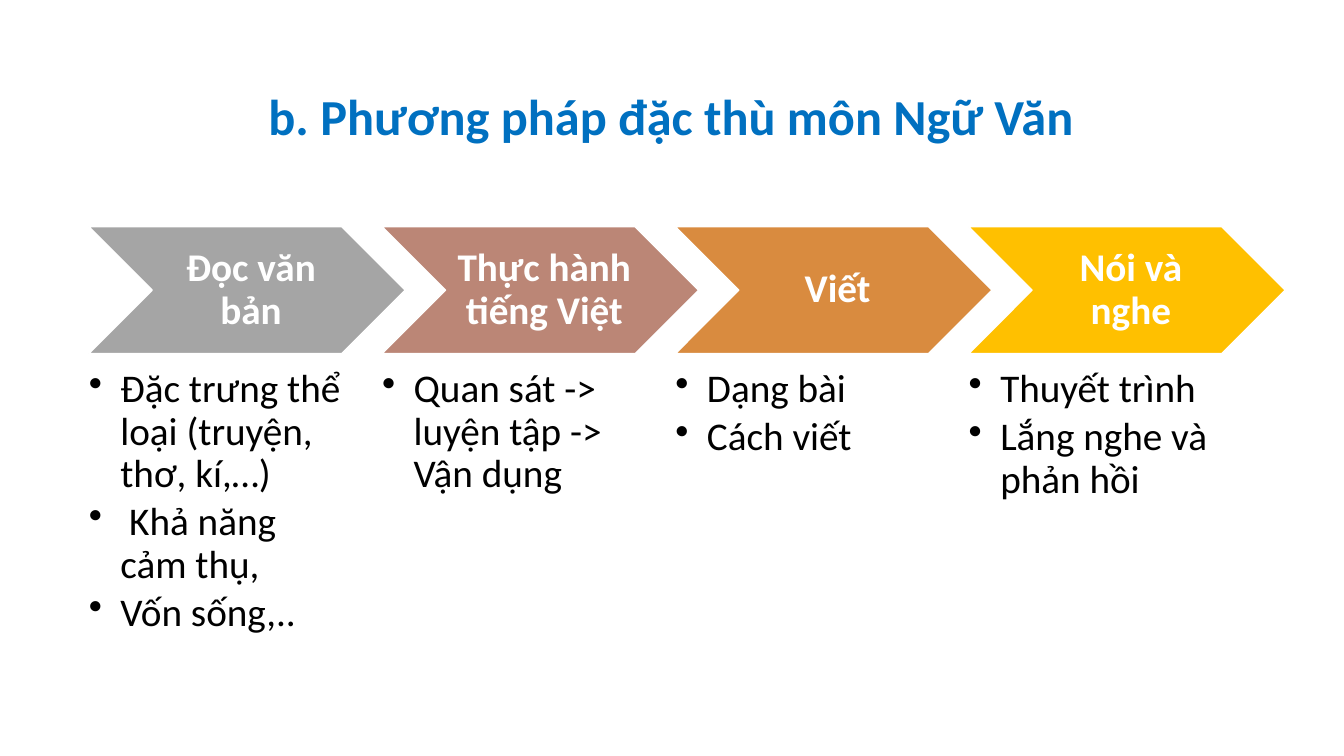
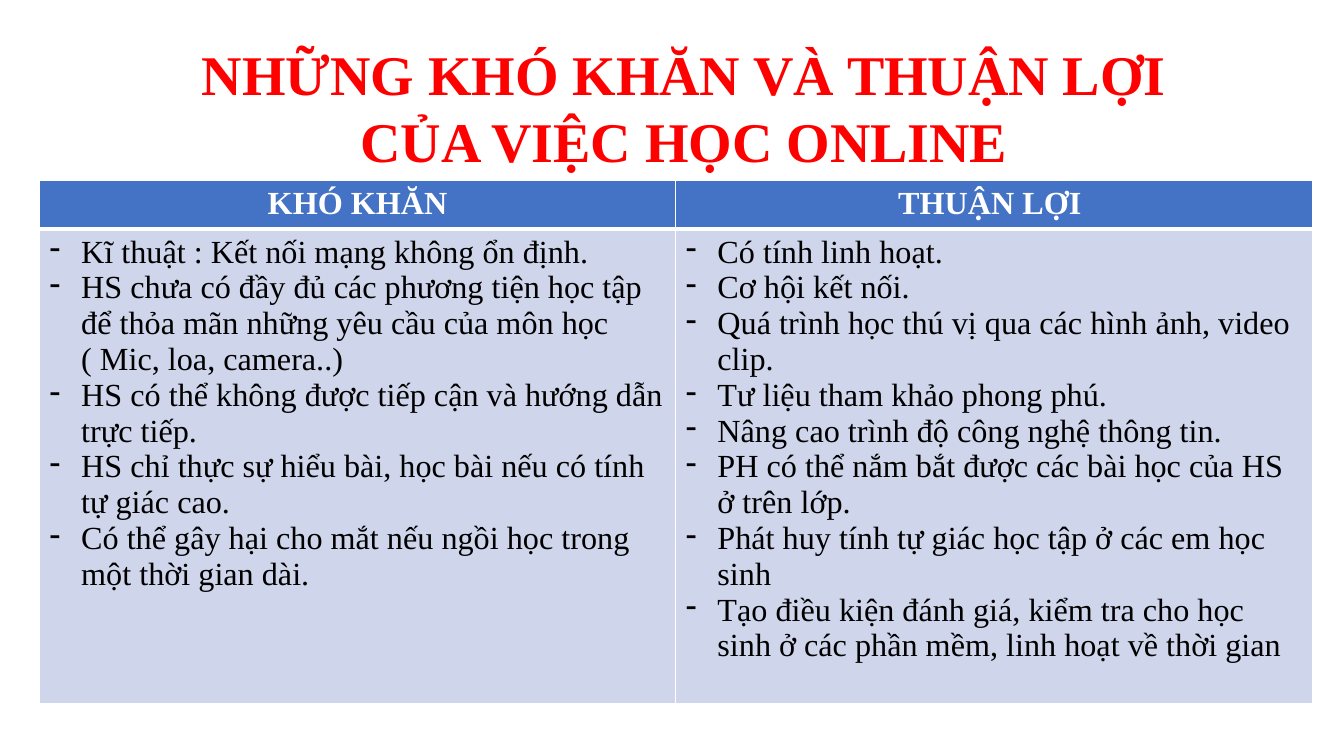
from dataclasses import dataclass

from lxml import etree
from pptx import Presentation
from pptx.dml.color import RGBColor
from pptx.enum import shapes, text
from pptx.oxml import ns
from pptx.util import Pt


@dataclass(frozen=True)
class Theme:
    sans: str = "Calibri"
    serif: str = "Times New Roman"
    white: str = "FFFFFF"
    black: str = "000000"
    blue: str = "0070C0"
    red: str = "FF0000"
    header_fill: str = "4472C4"
    body_fill: str = "CFD5EA"
    steps: tuple = ("A5A5A5", "BB8676", "D98B3F", "FFC000")
    sans_title_size: float = 36
    serif_title_size: float = 40
    step_size: float = 28
    table_size: float = 23
    bullet_indent: float = 22.5


THEME = Theme()

METHODS = [
    ("Đọc văn bản", ["Đặc trưng thể loại (truyện, thơ, kí,…)", " Khả năng cảm thụ,", "Vốn sống,.."]),
    ("Thực hành tiếng Việt", ["Quan sát -> luyện tập -> Vận dụng"]),
    ("Viết", ["Dạng bài", "Cách viết"]),
    ("Nói và nghe", ["Thuyết trình", "Lắng nghe và phản hồi"]),
]

ONLINE_LEARNING = [
    ("KHÓ KHĂN", [
        "Kĩ thuật : Kết nối mạng không ổn định.",
        "HS chưa có đầy đủ các phương tiện học tập để thỏa mãn những yêu cầu của môn học "
        "( Mic, loa, camera..)",
        "HS có thể không được tiếp cận và hướng dẫn trực tiếp.",
        "HS chỉ thực sự hiểu bài, học bài nếu có tính tự giác cao.",
        "Có thể gây hại cho mắt nếu ngồi học trong một thời gian dài.",
    ]),
    ("THUẬN LỢI ", [
        "Có tính linh hoạt.",
        "Cơ hội kết nối.",
        "Quá trình học thú vị qua các hình ảnh, video clip.",
        "Tư liệu tham khảo phong phú.",
        "Nâng cao trình độ công nghệ thông tin.",
        "PH có thể nắm bắt được các bài học của HS ở trên lớp.",
        "Phát huy tính tự giác học tập ở các em học sinh",
        "Tạo điều kiện đánh giá, kiểm tra cho học sinh ở các phần mềm, linh hoạt về thời gian",
    ]),
]


def rgb(color):
    return RGBColor.from_string(color)


def add_bullet(paragraph, character):
    """Give the paragraph a hanging bullet; call before setting its font."""
    properties = paragraph._p.get_or_add_pPr()
    indent = Pt(THEME.bullet_indent)
    properties.set("marL", str(indent))
    properties.set("indent", str(-indent))
    etree.SubElement(properties, ns.qn("a:buChar")).set("char", character)


def write(frame, lines, font, size, color, bold=False, centered=False,
          bullet=None, line_spacing=None, space_after=None):
    """Fill a text frame with one paragraph for each line."""
    for index, line in enumerate(lines):
        paragraph = frame.add_paragraph() if index else frame.paragraphs[0]
        paragraph.text = line
        if bullet:
            add_bullet(paragraph, bullet)
        paragraph.alignment = text.PP_ALIGN.CENTER if centered else text.PP_ALIGN.LEFT
        if line_spacing:
            paragraph.line_spacing = line_spacing
        if space_after is not None:
            paragraph.space_after = Pt(space_after)
        paragraph.font.name = font
        paragraph.font.size = Pt(size)
        paragraph.font.bold = bold
        paragraph.font.color.rgb = rgb(color)


def set_margins(holder, left, top, right, bottom):
    holder.margin_left, holder.margin_top = Pt(left), Pt(top)
    holder.margin_right, holder.margin_bottom = Pt(right), Pt(bottom)


def add_text_box(slide, left, top, width, height):
    frame = slide.shapes.add_textbox(Pt(left), Pt(top), Pt(width), Pt(height)).text_frame
    frame.word_wrap = True
    return frame


def add_title(slide, box, title, font, size, color, wrap=True):
    frame = add_text_box(slide, *box)
    frame.word_wrap = wrap
    frame.auto_size = text.MSO_AUTO_SIZE.SHAPE_TO_FIT_TEXT
    write(frame, [title], font, size, color, bold=True, centered=True)


def add_step(slide, left, fill, heading, points):
    """Add a chevron with its heading and the bullet list under it."""
    chevron = slide.shapes.add_shape(
        shapes.MSO_SHAPE.CHEVRON, Pt(left), Pt(162), Pt(226), Pt(90.5))
    chevron.shadow.inherit = False
    chevron.fill.solid()
    chevron.fill.fore_color.rgb = rgb(fill)
    chevron.line.color.rgb = rgb(THEME.white)
    chevron.line.width = Pt(1)
    frame = chevron.text_frame
    frame.word_wrap = True
    frame.vertical_anchor = text.MSO_ANCHOR.MIDDLE
    set_margins(frame, 8.5, 3, 3, 3)
    write(frame, [heading], THEME.sans, THEME.step_size, THEME.white,
          bold=True, centered=True, line_spacing=0.9)

    body = add_text_box(slide, left, 263.5, 181.3, 198.7)
    set_margins(body, 0, 0, 0, 0)
    write(body, points, THEME.sans, THEME.step_size, THEME.black,
          bullet="•", line_spacing=0.9, space_after=4.2)


def style_cell(cell, fill, top_width, bottom_width):
    """Set margins, white borders and fill; borders precede the fill in XML."""
    set_margins(cell, 7.2, 3.6, 7.2, 3.6)
    properties = cell._tc.get_or_add_tcPr()
    for side, width in (("L", 1), ("R", 1), ("T", top_width), ("B", bottom_width)):
        line = etree.SubElement(properties, ns.qn(f"a:ln{side}"), w=str(Pt(width)))
        solid = etree.SubElement(line, ns.qn("a:solidFill"))
        etree.SubElement(solid, ns.qn("a:srgbClr"), val=THEME.white)
    cell.fill.solid()
    cell.fill.fore_color.rgb = rgb(fill)


def add_comparison_table(slide, columns):
    row_heights = (34.5, 338.5)
    width = 909
    table = slide.shapes.add_table(
        len(row_heights), len(columns), Pt(28.3), Pt(129), Pt(width), Pt(sum(row_heights))).table
    for row, height in zip(table.rows, row_heights):
        row.height = Pt(height)
    for index, (heading, points) in enumerate(columns):
        table.columns[index].width = Pt(width / len(columns))
        header, body = table.cell(0, index), table.cell(1, index)
        style_cell(header, THEME.header_fill, 1, 3)
        write(header.text_frame, [heading], THEME.serif, THEME.table_size,
              THEME.white, bold=True, centered=True)
        style_cell(body, THEME.body_fill, 3, 1)
        write(body.text_frame, points, THEME.serif, THEME.table_size, THEME.black, bullet="-")


def add_slide(presentation):
    return presentation.slides.add_slide(presentation.slide_layouts[6])


def build_methods_slide(presentation):
    slide = add_slide(presentation)
    add_title(slide, (182, 57.5, 595, 51), "b. Phương pháp đặc thù môn Ngữ Văn",
              THEME.sans, THEME.sans_title_size, THEME.blue, wrap=False)
    first_left, pitch = 63.5, 209.5
    for index, (fill, (heading, points)) in enumerate(zip(THEME.steps, METHODS)):
        add_step(slide, first_left + index * pitch, fill, heading, points)


def build_online_slide(presentation):
    slide = add_slide(presentation)
    add_title(slide, (108.7, 24.5, 759.6, 104.4),
              "NHỮNG KHÓ KHĂN VÀ THUẬN LỢI CỦA VIỆC HỌC ONLINE",
              THEME.serif, THEME.serif_title_size, THEME.red)
    add_comparison_table(slide, ONLINE_LEARNING)


def main():
    presentation = Presentation()
    presentation.slide_width, presentation.slide_height = Pt(960), Pt(540)
    build_methods_slide(presentation)
    build_online_slide(presentation)
    presentation.save("out.pptx")


if __name__ == "__main__":
    main()
